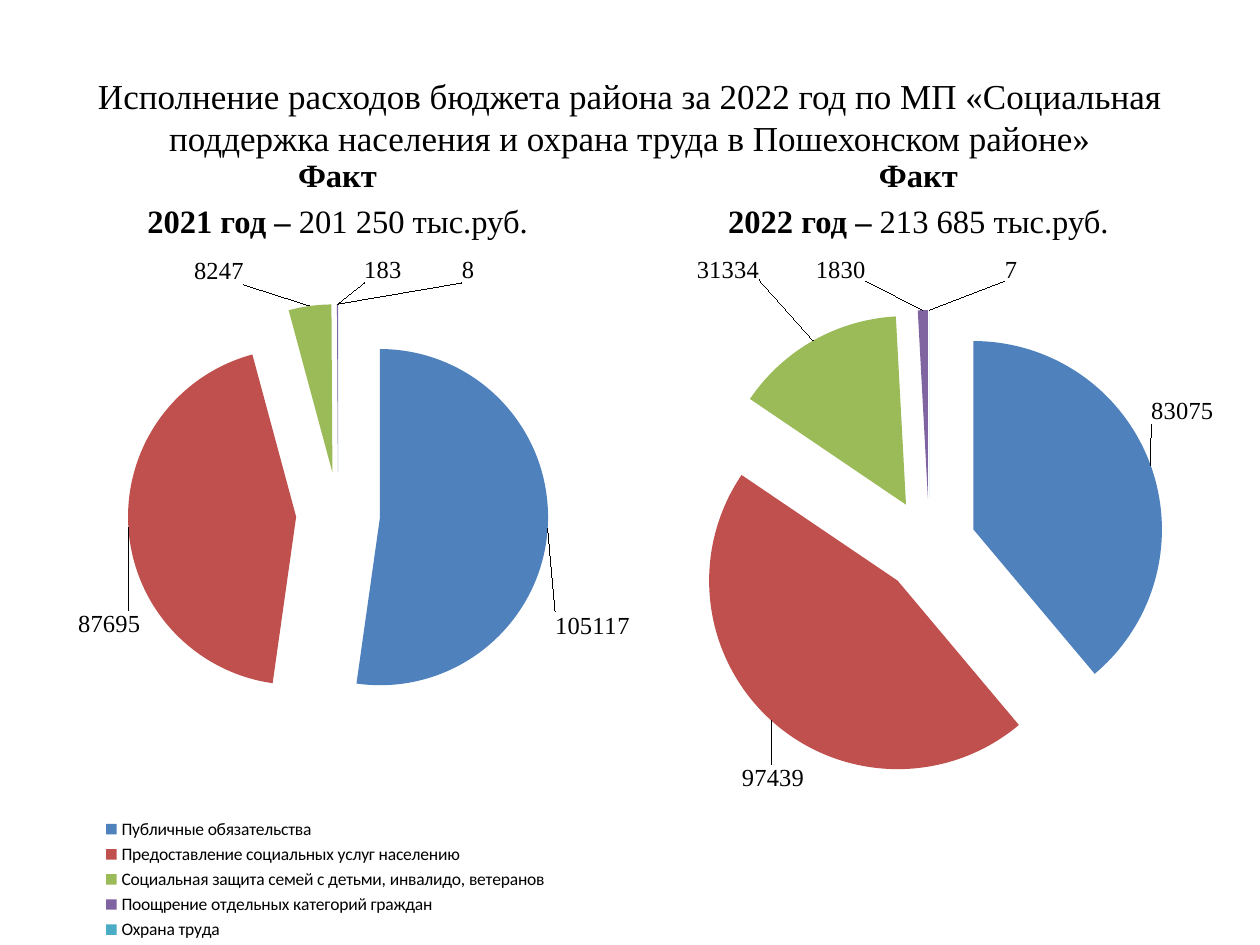
from lxml import etree
from pptx import Presentation
from pptx.chart.data import CategoryChartData
from pptx.dml.color import RGBColor
from pptx.enum.chart import XL_CHART_TYPE, XL_LABEL_POSITION, XL_LEGEND_POSITION
from pptx.enum.text import MSO_ANCHOR, PP_ALIGN
from pptx.oxml import parse_xml
from pptx.oxml.ns import nsdecls, qn
from pptx.util import Cm, Pt

PIE = XL_CHART_TYPE.PIE
OUTSIDE = XL_LABEL_POSITION.OUTSIDE_END
LEGEND_BOTTOM = XL_LEGEND_POSITION.BOTTOM
CENTER = PP_ALIGN.CENTER
MIDDLE, BOTTOM = MSO_ANCHOR.MIDDLE, MSO_ANCHOR.BOTTOM

BLACK = RGBColor(0x00, 0x00, 0x00)
SLICE_COLORS = [
    RGBColor(0x4F, 0x81, 0xBD),
    RGBColor(0xC0, 0x50, 0x4D),
    RGBColor(0x9B, 0xBB, 0x59),
    RGBColor(0x80, 0x64, 0xA2),
    RGBColor(0x4B, 0xAC, 0xC6),
]
SERIF, SANS = "Times New Roman", "Calibri"
EXPLOSION = 25

TITLE = ("Исполнение расходов бюджета района за 2022 год по МП «Социальная "
         "поддержка населения и охрана труда в Пошехонском районе»")
EXPENSES = [
    "Публичные обязательства",
    "Предоставление социальных услуг населению",
    "Социальная защита семей с детьми, инвалидо, ветеранов",
    "Поощрение отдельных категорий граждан",
    "Охрана труда",
]


def format_font(font, name, size, bold=False):
    font.name, font.size, font.bold = name, Pt(size), bold
    font.color.rgb = BLACK


def add_text(page, area, paragraphs, size, anchor, space_before=0):
    """Each paragraph is a list of (text, bold) spans."""
    frame = page.shapes.add_textbox(*map(Cm, area)).text_frame
    frame.word_wrap = True
    frame.vertical_anchor = anchor
    for index, spans in enumerate(paragraphs):
        para = frame.add_paragraph() if index else frame.paragraphs[0]
        para.alignment = CENTER
        para.space_before = Pt(space_before)
        for text, bold in spans:
            span = para.add_run()
            span.text = text
            format_font(span.font, SERIF, size, bold)


def add_year_heading(page, left, year, total):
    lines = [[("Факт", True)], [(f"{year} год – ", True), (f"{total} тыс.руб.", False)]]
    add_text(page, (left, 3.18, 11.23, 1.78), lines, 18.6, BOTTOM, space_before=3.7)


def make_layout(**settings):
    layout = parse_xml(f"<c:layout {nsdecls('c')}><c:manualLayout/></c:layout>")
    for tag, value in settings.items():
        etree.SubElement(layout[0], qn(f"c:{tag}"), val=str(value))
    return layout


def make_area_layout(x, y, w, h, **target):
    return make_layout(**target, xMode="edge", yMode="edge", x=x, y=y, w=w, h=h)


def replace_layout(parent, layout, after=None):
    """Put the layout right after the named child, or first."""
    for old in parent.findall(qn("c:layout")):
        parent.remove(old)
    position = 0 if after is None else parent.index(parent.find(qn(after))) + 1
    parent.insert(position, layout)


def add_pie(page, area, categories, values, plot_area, label_shifts):
    data = CategoryChartData()
    data.categories = categories
    data.add_series("Series 1", values)
    chart = page.shapes.add_chart(PIE, *map(Cm, area), data).chart
    chart.has_title = False
    chart.has_legend = False
    format_font(chart.font, SANS, 10)

    # Exploded slices
    plot = chart.plots[0]
    plot.vary_by_categories = True
    series = plot.series[0]
    explosion = parse_xml(f'<c:explosion {nsdecls("c")} val="{EXPLOSION}"/>')
    series.format.fill.background()
    series.format.line.fill.background()
    series._element.find(qn("c:spPr")).addnext(explosion)
    series.data_labels.show_value = True
    format_font(series.data_labels.font, SERIF, 14)

    # Slice colours and labels moved away from the slices
    for index, (color, shift) in enumerate(zip(SLICE_COLORS, label_shifts)):
        point = series.points[index]
        point.format.fill.solid()
        point.format.fill.fore_color.rgb = color
        point.format.line.fill.background()
        label = point.data_label
        label.position = OUTSIDE
        format_font(label.font, SERIF, 14)
        label_xml = series.data_labels._element.findall(qn("c:dLbl"))[index]
        replace_layout(label_xml, make_layout(x=shift[0], y=shift[1]), "c:idx")

    plot_xml = chart._chartSpace.chart.plotArea
    replace_layout(plot_xml, make_area_layout(*plot_area, layoutTarget="inner"))
    return chart


def add_legend(chart, area):
    chart.has_legend = True
    legend = chart.legend
    legend.position = LEGEND_BOTTOM
    legend.include_in_layout = False
    format_font(legend.font, SANS, 10)
    replace_layout(legend._element, make_area_layout(*area), "c:legendPos")


def main():
    deck = Presentation()
    deck.slide_width, deck.slide_height = Cm(25.4), Cm(19.05)
    page = deck.slides.add_slide(deck.slide_layouts[6])

    # Title and year headings
    add_text(page, (1.27, 0.76, 22.86, 3.18), [[(TITLE, False)]], 20, MIDDLE)
    add_year_heading(page, 1.19, 2021, "201 250")
    add_year_heading(page, 12.9, 2022, "213 685")

    # Spending in 2021, with the legend for both charts
    chart_2021 = add_pie(
        page, (0, 5.16, 13.11, 13.89), EXPENSES, [105117, 87695, 8247, 183, 8],
        (0.11, 0.07, 0.82, 0.61),
        [(0, 0.14), (0.03, 0.14), (-0.1, -0.02), (0.07, -0.02), (0.2, -0.02)])
    add_legend(chart_2021, (0.15, 0.81, 0.7, 0.19))

    # Spending in 2022
    add_pie(
        page, (12.7, 5.16, 12.7, 10.92), ["1", "2", "3", "4", "5"],
        [83075, 97439, 31334, 1830, 7], (0.1, 0.1, 0.75, 0.87),
        [(-0.01, -0.07), (0.06, 0.07), (-0.08, -0.1), (-0.13, -0.04), (0.13, -0.04)])

    deck.save("out.pptx")


if __name__ == "__main__":
    main()
